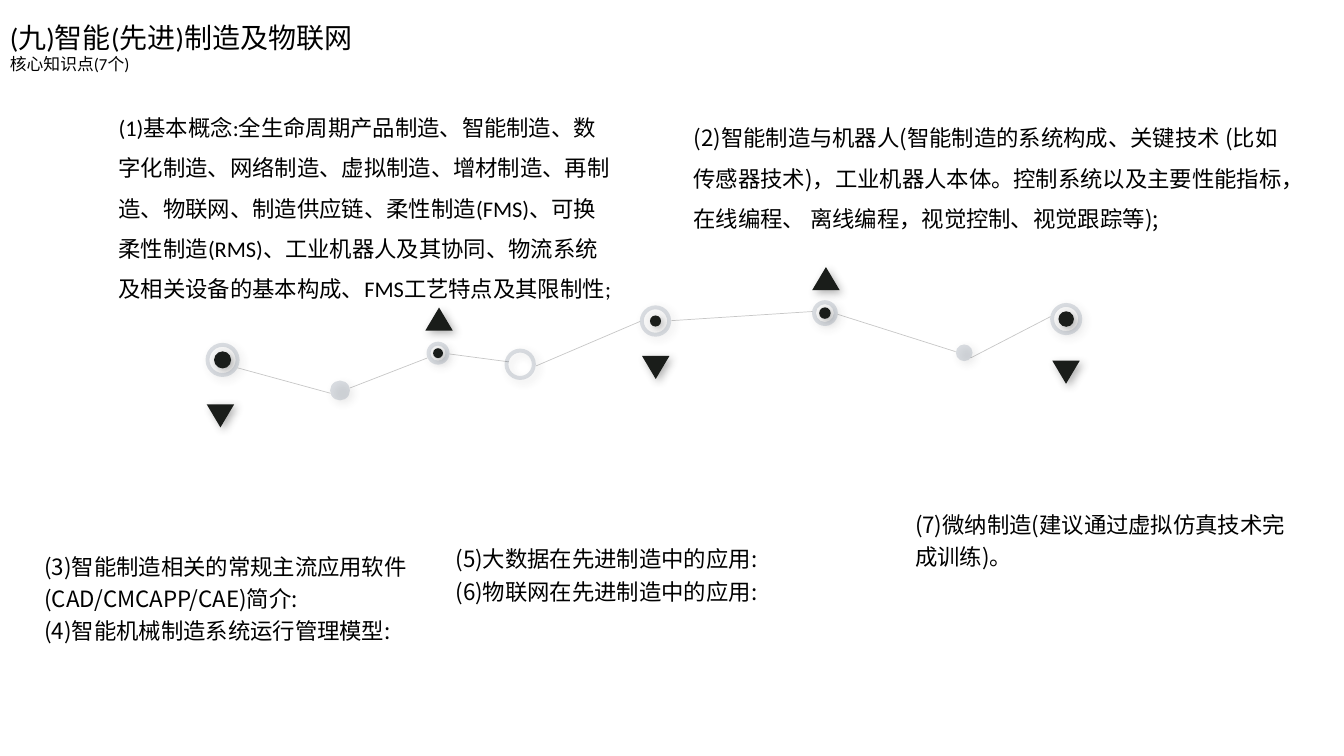
from lxml import etree
from pptx import Presentation
from pptx.dml.color import RGBColor
from pptx.enum.shapes import MSO_CONNECTOR, MSO_SHAPE
from pptx.enum.text import MSO_ANCHOR, PP_ALIGN
from pptx.oxml.ns import qn
from pptx.util import Cm, Pt

OVAL, DONUT, TRIANGLE = MSO_SHAPE.OVAL, MSO_SHAPE.DONUT, MSO_SHAPE.ISOSCELES_TRIANGLE
STRAIGHT = MSO_CONNECTOR.STRAIGHT
TOP, MIDDLE, LEFT = MSO_ANCHOR.TOP, MSO_ANCHOR.MIDDLE, PP_ALIGN.LEFT
BLACK, DARK, SLATE, SHADE = "000000", "1A1D1A", "768395", "404040"
CJK_FONT, LATIN_FONT = "Noto Sans CJK SC", "Calibri"
RING_WIDTH = 0.1

HEADING = "(九)智能(先进)制造及物联网\n核心知识点(7个)"
CONCEPTS = (
    "(1)基本概念:全生命周期产品制造、智能制造、数字化制造、网络制造、虚拟制造、"
    "增材制造、再制造、物联网、制造供应链、柔性制造(FMS)、可换柔性制造(RMS)、"
    "工业机器人及其协同、物流系统及相关设备的基本构成、FMS工艺特点及其限制性;"
)
TOPICS = [
    ((17.48, 0.28, 14.88, 8.08), 1.5,
     "(2)智能制造与机器人(智能制造的系统构成、关键技术 (比如传感器技术)，"
     "工业机器人本体。控制系统以及主要性能指标，在线编程、 离线编程，"
     "视觉控制、视觉跟踪等);"),
    ((1.12, 10.97, 10.74, 8.08), 1.2,
     "(3)智能制造相关的常规主流应用软件(CAD/CMCAPP/CAE)简介:\n"
     "(4)智能机械制造系统运行管理模型:"),
    ((11.48, 10.54, 10.74, 7.77), 1.2,
     "(5)大数据在先进制造中的应用:\n(6)物联网在先进制造中的应用:"),
    ((23.06, 10.08, 9.5, 6.93), 1.2,
     "(7)微纳制造(建议通过虚拟仿真技术完成训练)。"),
]
RINGS = [
    (5.61, 9.07, 0.86), (11.04, 8.9, 0.58), (13.11, 9.18, 0.79),
    (16.52, 8.09, 0.79), (20.79, 7.89, 0.65), (26.87, 8.04, 0.81),
]
CORES = [
    (5.61, 9.07, 0.43), (11.04, 8.9, 0.25), (16.52, 8.09, 0.28),
    (20.79, 7.89, 0.29), (26.87, 8.04, 0.39),
]
PALE_DOTS = [(8.57, 9.84, 0.5), (24.3, 8.89, 0.42)]
LINKS = [
    (5.99, 9.27, 8.33, 9.91), (8.81, 9.78, 10.77, 9.02),
    (11.33, 8.92, 12.83, 9.12), (13.51, 9.22, 16.13, 8.1),
    (16.92, 8.08, 20.47, 7.85), (21.11, 7.92, 24.08, 8.86),
    (24.46, 9.02, 26.47, 7.98),
]
POINTERS = [
    (5.21, 10.19, 180), (10.72, 7.75, 0), (16.18, 8.97, 180),
    (20.47, 6.73, 0), (26.52, 9.09, 180),
]


def rgb(value):
    """Return the colour for a hex string."""
    return RGBColor.from_string(value)


def set_alpha(fill, percent):
    """Make a solid fill partly transparent."""
    colour = fill._xPr.find(qn("a:solidFill"))[0]
    etree.SubElement(colour, qn("a:alpha"), val=str(percent * 1000))


def add_shadow(shape):
    """Give a shape the soft shadow falling to the lower right."""
    shape.shadow.inherit = False
    effects = shape._element.spPr.find(qn("a:effectLst"))
    shadow = etree.SubElement(
        effects, qn("a:outerShdw"), blurRad=str(Pt(6)), dist=str(Pt(3)),
        dir="2700000", algn="tl", rotWithShape="0")
    colour = etree.SubElement(shadow, qn("a:srgbClr"), val=SHADE)
    etree.SubElement(colour, qn("a:alpha"), val="40000")


def add_mark(slide, kind, left, top, width, height, colour):
    """Add a borderless filled shape with a shadow."""
    mark = slide.shapes.add_shape(kind, Cm(left), Cm(top), Cm(width), Cm(height))
    mark.fill.solid()
    mark.fill.fore_color.rgb = rgb(colour)
    mark.line.fill.background()
    add_shadow(mark)
    return mark


def add_round(slide, kind, centre_x, centre_y, size, colour):
    """Add a round mark about its centre."""
    return add_mark(slide, kind, centre_x - size / 2, centre_y - size / 2,
                    size, size, colour)


def add_link(slide, x1, y1, x2, y2):
    """Add a thin faint line between two nodes."""
    link = slide.shapes.add_connector(STRAIGHT, Cm(x1), Cm(y1), Cm(x2), Cm(y2))
    link.line.width = Pt(0.5)
    link.line.color.rgb = rgb(BLACK)
    set_alpha(link.line.fill, 22)
    etree.SubElement(link._element.spPr, qn("a:effectLst"))


def write_text(holder, box, text, sizes, spacing, font, anchor, insets):
    """Place a text holder and fill it with formatted paragraphs."""
    holder.left, holder.top, holder.width, holder.height = map(Cm, box)
    frame = holder.text_frame
    frame.text = text
    frame.word_wrap = True
    frame.vertical_anchor = anchor
    frame.margin_left = frame.margin_right = Cm(insets[0])
    frame.margin_top = frame.margin_bottom = Cm(insets[1])
    for paragraph, size in zip(frame.paragraphs, sizes):
        paragraph.alignment = LEFT
        paragraph.line_spacing = spacing
        paragraph.space_before = Pt(0)
        properties = paragraph._p.get_or_add_pPr()
        properties.set("marL", "0")
        properties.set("indent", "0")
        etree.SubElement(properties, qn("a:buNone"))
        for run in paragraph.runs:
            run.font.size = Pt(size)
            run.font.name = font
            run.font.color.rgb = rgb(BLACK)
            etree.SubElement(run._r.rPr, qn("a:ea"), typeface=CJK_FONT)


def add_timeline(slide):
    """Draw the chain of nodes with its pointers."""
    for dot in PALE_DOTS:
        set_alpha(add_round(slide, OVAL, *dot, SLATE).fill, 26)
    for core in CORES:
        add_round(slide, OVAL, *core, DARK)
    for ring in RINGS:
        outline = add_round(slide, DONUT, *ring, SLATE)
        outline.adjustments[0] = RING_WIDTH / ring[2]
        set_alpha(outline.fill, 26)
    for link in LINKS:
        add_link(slide, *link)
    for left, top, turn in POINTERS:
        add_mark(slide, TRIANGLE, left, top, 0.69, 0.58, DARK).rotation = turn


def main():
    """Build the slide and save it."""
    deck = Presentation()
    deck.slide_width, deck.slide_height = Cm(33.87), Cm(19.05)
    slide = deck.slides.add_slide(deck.slide_layouts[1])
    add_timeline(slide)
    for box, spacing, text in TOPICS:
        topic = slide.shapes.add_textbox(0, 0, 0, 0)
        write_text(topic, box, text, (16, 16), spacing, CJK_FONT, MIDDLE, (0, 0))
    write_text(slide.placeholders[1], (2.74, 2.41, 12.98, 5.26), CONCEPTS,
               (16,), 1.5, LATIN_FONT, TOP, (0.25, 0.13))
    write_text(slide.shapes.title, (0, 0.38, 15.62, 1.63), HEADING,
               (20, 12), 1.0, LATIN_FONT, TOP, (0.25, 0.13))
    deck.save("out.pptx")


if __name__ == "__main__":
    main()
